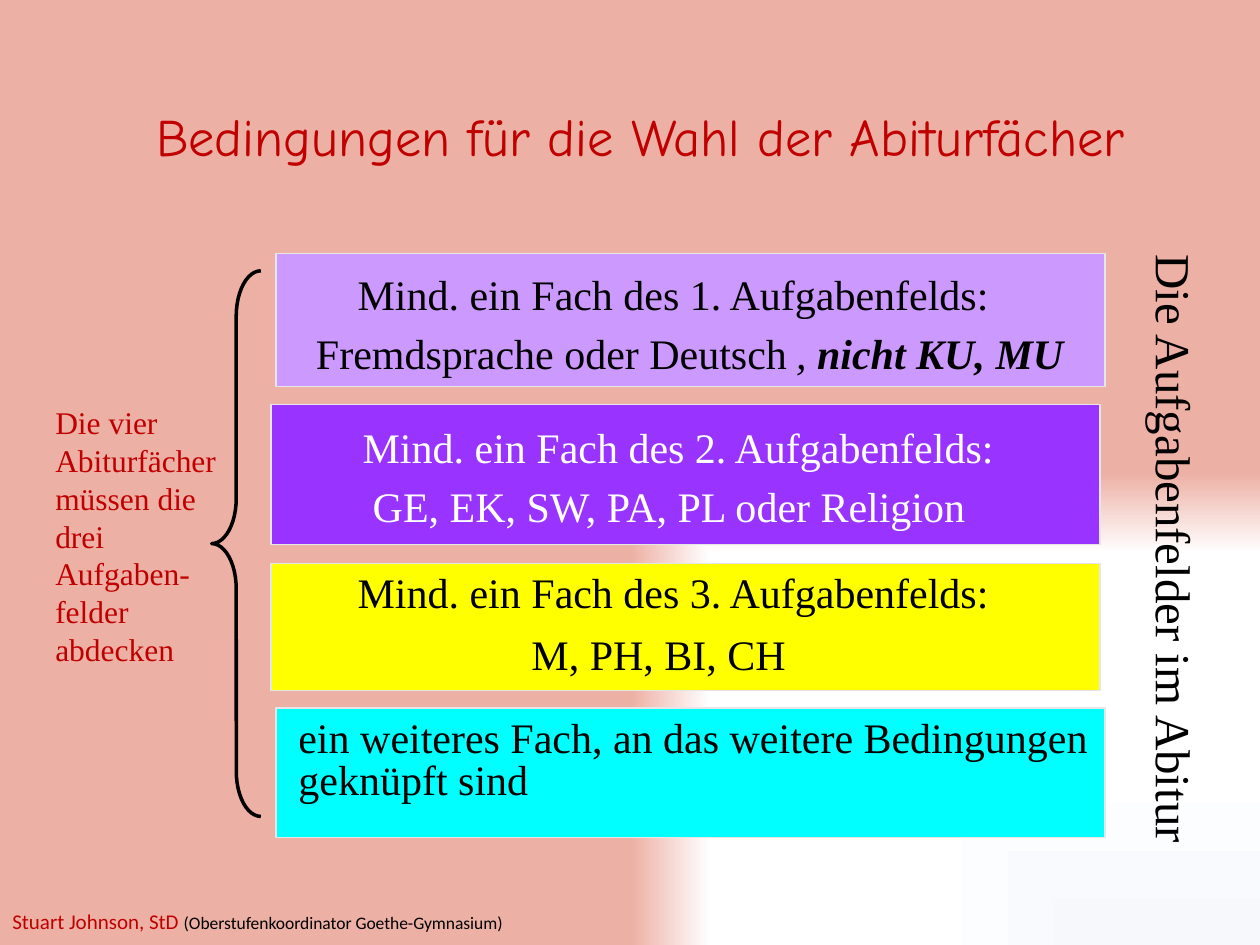
from lxml import etree
from pptx import Presentation
from pptx.dml.color import RGBColor
from pptx.enum.shapes import MSO_SHAPE
from pptx.enum.text import MSO_ANCHOR, MSO_AUTO_SIZE, PP_ALIGN
from pptx.oxml.ns import qn
from pptx.util import Inches, Pt

COLORS = {
    "black": "000000", "white": "FFFFFF", "red": "C00000", "border": "E7E6E6",
    "lilac": "CC99FF", "violet": "9933FF", "yellow": "FFFF00", "cyan": "00FFFF",
    "salmon": "EDB0A5", "mist": "F6F8FC",
}
SERIF = "Times New Roman"

deck = Presentation()
deck.slide_width, deck.slide_height = Inches(10), Inches(7.5)
page = deck.slides.add_slide(deck.slide_layouts[6])
cell = deck.slide_width / 100


def add_box(shapes, area, fill=None, border=None, kind=MSO_SHAPE.RECTANGLE, weight=0.75):
    box = shapes.add_shape(kind, *[round(cell * length) for length in area])
    box.shadow.inherit = False
    if fill:
        box.fill.solid()
        box.fill.fore_color.rgb = RGBColor.from_string(COLORS[fill])
    else:
        box.fill.background()
    if border:
        box.line.color.rgb = RGBColor.from_string(COLORS[border])
        box.line.width = Pt(weight)
    else:
        box.line.fill.background()
    return box


def add_text(shapes, area, spans, size, color, font=SERIF, fill=None,
             spacing=None, wrap=True, anchor=MSO_ANCHOR.MIDDLE):
    if fill:
        box = add_box(shapes, area, fill)
    else:
        box = shapes.add_textbox(*[round(cell * length) for length in area])
    frame = box.text_frame
    frame.word_wrap = wrap
    frame.vertical_anchor = anchor
    frame.auto_size = MSO_AUTO_SIZE.SHAPE_TO_FIT_TEXT
    para = frame.paragraphs[0]
    para.alignment = PP_ALIGN.LEFT
    if spacing:
        para.line_spacing = spacing
    for words in spans:
        span = para.add_run()
        span.text = words
        span.font.size = Pt(size)
        span.font.name = font
        span.font.color.rgb = RGBColor.from_string(COLORS[color])
    return box


page.background.fill.gradient()
gradient = page.element.find(".//" + qn("a:gradFill"))
for child in list(gradient):
    gradient.remove(child)
stops = etree.SubElement(gradient, qn("a:gsLst"))
for share, color in [(0, "mist"), (40, "white"), (83, "white"), (100, "salmon")]:
    stop = etree.SubElement(stops, qn("a:gs"), pos=str(share * 1000))
    etree.SubElement(stop, qn("a:srgbClr"), val=COLORS[color])
fade = etree.SubElement(gradient, qn("a:path"), path="rect")
etree.SubElement(fade, qn("a:fillToRect"), l="100000", t="100000")

footer = add_text(page.shapes, (0, 71.6, 41.7, 3),
                  ["Stuart Johnson, StD ", "(Oberstufenkoordinator Goethe-Gymnasium)"],
                  12, "red", "Calibri", anchor=MSO_ANCHOR.TOP)
role = footer.text_frame.paragraphs[0].runs[1]
role.font.size = Pt(10)
role.font.color.rgb = RGBColor.from_string(COLORS["black"])

side_title = add_text(page.shapes, (61.6, 39.8, 62.8, 7.5),
                      ["Die Aufgabenfelder im Abitur"], 28, "black", spacing=0.9)
side_title.text_frame.auto_size = MSO_AUTO_SIZE.NONE
side_title.text_frame.paragraphs[0].alignment = PP_ALIGN.CENTER
side_title.rotation = 90

fields = [
    ("violet", "white", 21.5, 32.1, 11.1, [
        ((27.8, 33.4, 57.5, 4.1), ["Mind. ein Fach des 2. Aufgabenfelds:"], True, None, True),
        ((28.6, 38, 53.7, 4.2), ["GE, EK, SW, PA, PL oder Religion"], False, None, True)]),
    ("yellow", "black", 21.5, 44.7, 10.1, [
        ((27.4, 46.2, 55.7, 2.8), ["Mind. ein Fach des 3. Aufgabenfelds:"], True, 0.6, True),
        ((41.2, 50, 22.4, 3.8), ["M, PH, BI, CH"], False, None, False)]),
    ("lilac", "black", 21.9, 20.1, 10.6, [
        ((27.4, 21.3, 59.7, 4), ["Mind. ein Fach des 1. Aufgabenfelds:"], True, None, True),
        ((24.1, 26, 39.7, 4), ["Fremdsprache oder Deutsch"], False, None, False),
        ((62.2, 26, 24.2, 4), [", ", "nicht KU, MU"], False, None, True)]),
    ("cyan", "black", 21.9, 56.2, 10.3, [
        ((22.7, 57.4, 65, 6.1),
         ["ein weiteres Fach, an das weitere Bedingungen geknüpft sind"], False, 0.85, True)]),
]
for fill, color, left, top, height, texts in fields:
    group = page.shapes.add_group_shape()
    add_box(group.shapes, (left, top, 65.8, height), fill, "border")
    for area, spans, filled, spacing, wrap in texts:
        label = add_text(group.shapes, area, spans, 24, color,
                         fill=fill if filled else None, spacing=spacing, wrap=wrap)
        if len(spans) > 1:
            comma, exclusion = label.text_frame.paragraphs[0].runs
            comma.font.italic = exclusion.font.italic = exclusion.font.bold = True

brace = add_box(page.shapes, (16.8, 21.5, 3.9, 43.3), border="black",
                kind=MSO_SHAPE.LEFT_BRACE, weight=2)
brace.adjustments[0], brace.adjustments[1] = 0.92, 0.5

add_text(page.shapes, (3.4, 31.5, 16.1, 22.2),
         ["Die vier Abiturfächer müssen die drei Aufgaben-felder abdecken"],
         18, "red", anchor=MSO_ANCHOR.TOP)
add_text(page.shapes, (11.4, 7.8, 85.6, 6.1), ["Bedingungen für die Wahl der Abiturfächer"],
         30, "red", "Comic Neue", anchor=MSO_ANCHOR.TOP)

deck.save("out.pptx")
